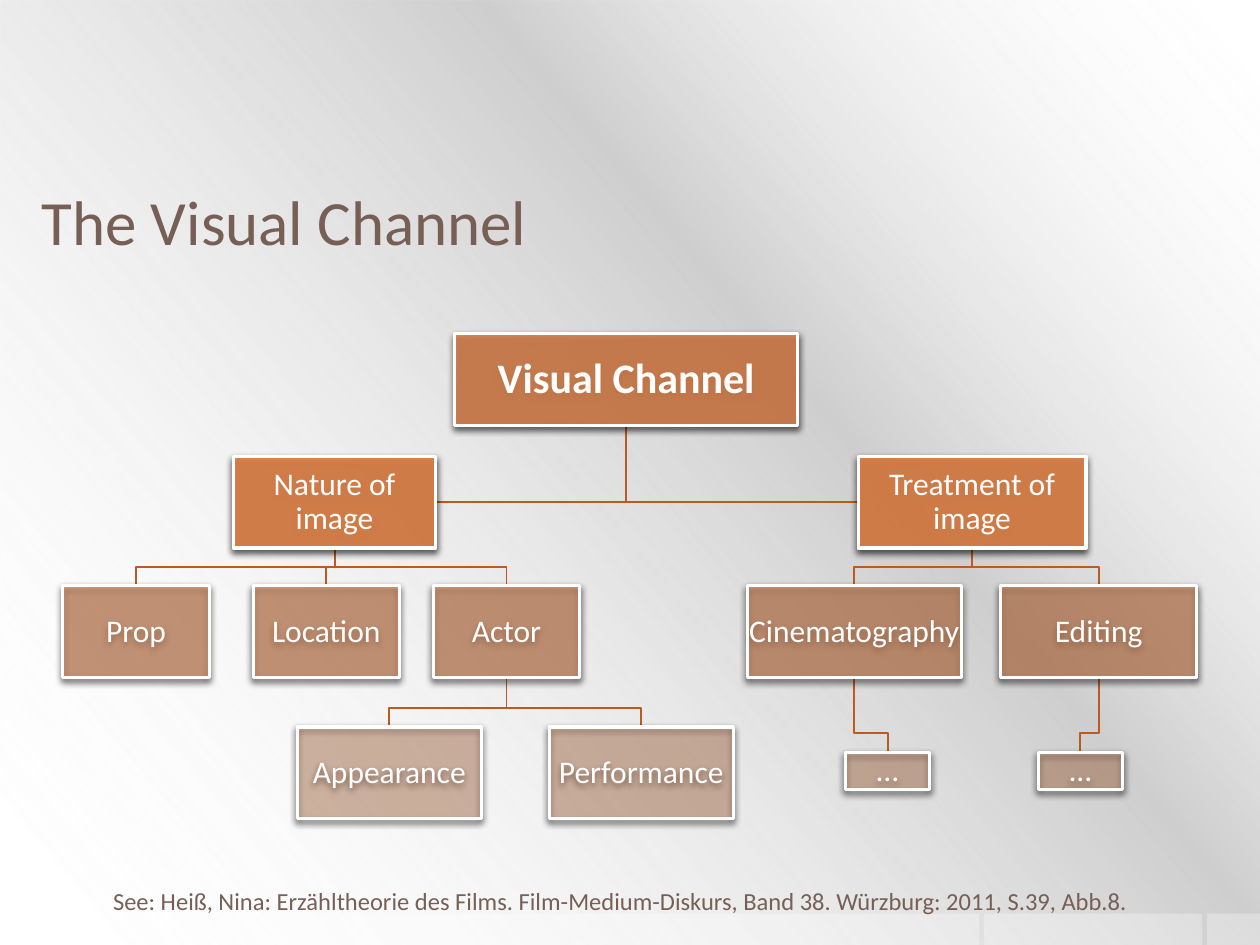
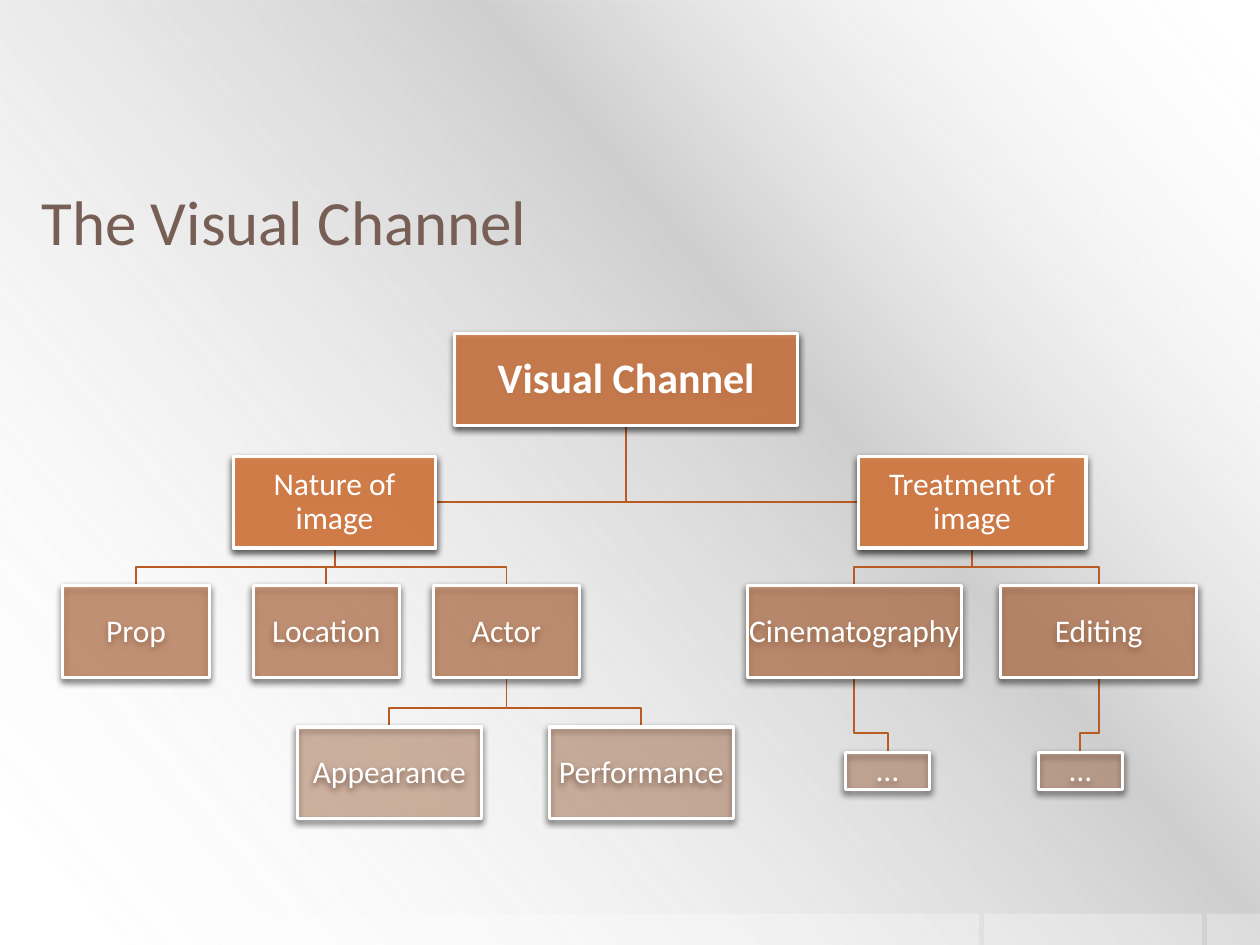
from dataclasses import dataclass
from lxml.etree import SubElement
from pptx import Presentation
from pptx.dml.color import RGBColor
from pptx.enum.shapes import MSO_SHAPE
from pptx.enum.text import MSO_ANCHOR, MSO_AUTO_SIZE, PP_ALIGN
from pptx.oxml.ns import qn
from pptx.util import Inches, Pt

COLUMNS, ROWS = 100, 75
SLIDE_WIDTH, SLIDE_HEIGHT = Inches(10), Inches(7.5)
FONT = "Calibri"
WHITE, GRAY, BROWN = "FFFFFF", "BFBFBF", "775F55"
ORANGE, RUST, BLACK = "DD8047", "B95B22", "000000"
TITLE = "The Visual Channel"
CITATION = (
    "See: Heiß, Nina: Erzähltheorie des Films. Film-Medium-Diskurs, "
    "Band 38. Würzburg: 2011, S.39, Abb.8."
)
GRADIENT = [(0, WHITE, 0), (34, GRAY, 61), (38, GRAY, 76), (100, WHITE, 0)]
BANDS = [(0, 77.7), (78.1, 17.3), (95.8, 4.2)]

LEVELS = {
    "root": {"top": 0, "height": 7.3, "opacity": 80},
    "branch": {"top": 9.7, "height": 7.3, "opacity": 90},
    "topic": {"top": 20, "height": 7.3, "opacity": 50},
    "detail": {"top": 31.2, "height": 7.3, "opacity": 30},
    "more": {"top": 33.2, "height": 3, "opacity": 30},
}
NODES = [
    ("Visual Channel", None, "root", 31.1, 27.2),
    ("Nature of image", "Visual Channel", "branch", 13.5, 16.1),
    ("Treatment of image", "Visual Channel", "branch", 63.1, 18.1),
    ("Prop", "Nature of image", "topic", 0, 11.6),
    ("Location", "Nature of image", "topic", 15.1, 11.6),
    ("Actor", "Nature of image", "topic", 29.4, 11.6),
    ("Cinematography", "Treatment of image", "topic", 54.3, 17),
    ("Editing", "Treatment of image", "topic", 74.4, 15.6),
    ("Appearance", "Actor", "detail", 18.6, 14.6),
    ("Performance", "Actor", "detail", 38.6, 14.6),
    ("…", "Cinematography", "more", 62.1, 6.7),
    ("…", "Editing", "more", 77.4, 6.7),
]


@dataclass
class Box:
    left: float
    top: float
    width: float
    height: float

    @property
    def right(self):
        return self.left + self.width

    @property
    def bottom(self):
        return self.top + self.height

    @property
    def center(self):
        return self.left + self.width / 2

    @property
    def middle(self):
        return self.top + self.height / 2

    def inner(self, left, top, width, height):
        return Box(self.left + left, self.top + top, width, height)

    def place(self):
        return (*point(self.left, self.top), *point(self.width, self.height))


PAGE = Box(0, 0, COLUMNS, ROWS)
TITLE_BOX = PAGE.inner(3.3, 12.5, 90, 10)
DIAGRAM_BOX = PAGE.inner(5, 26.5, 90, 38.5)
CITATION_BOX = PAGE.inner(3.5, 69.8, 91.5, 5.5)
BAND_BOX = PAGE.inner(0, 72.5, COLUMNS, 2.5)


def point(column, row):
    return round(SLIDE_WIDTH * column / COLUMNS), round(SLIDE_HEIGHT * row / ROWS)


def color(value):
    return RGBColor.from_string(value)


def set_all(target, values):
    for name, value in values.items():
        setattr(target, name, value)


def add_alpha(node, percent):
    SubElement(node, qn("a:alpha"), val=str(percent * 1000))


def write(frame, text, size, ink, frame_format, para_format, bold=False):
    set_all(frame, {"word_wrap": True, "auto_size": MSO_AUTO_SIZE.NONE, **frame_format})
    para = frame.paragraphs[0]
    set_all(para, para_format)
    span = para.add_run()
    span.text = text
    set_all(span.font, {"name": FONT, "size": Pt(size), "bold": bold})
    span.font.color.rgb = color(ink)


def add_panel(page, box, fill, opacity):
    panel = page.shapes.add_shape(MSO_SHAPE.RECTANGLE, *box.place())
    panel.shadow.inherit = False
    panel.fill.solid()
    panel.fill.fore_color.rgb = color(fill)
    add_alpha(panel.element.spPr.find(qn("a:solidFill")).find(qn("a:srgbClr")), opacity)
    panel.line.fill.background()
    return panel


def add_backdrop(page, box):
    backdrop = page.shapes.add_shape(MSO_SHAPE.RECTANGLE, *box.place())
    backdrop.shadow.inherit = False
    backdrop.line.fill.background()
    backdrop.fill.gradient()
    backdrop.fill.gradient_angle = 220
    stops = next(backdrop.element.iter(qn("a:gsLst")))
    for stop in list(stops):
        stops.remove(stop)
    for position, tint, opacity in GRADIENT:
        stop = SubElement(stops, qn("a:gs"), pos=str(position * 1000))
        add_alpha(SubElement(stop, qn("a:srgbClr"), val=tint), opacity)
    return backdrop


def add_bands(page, box):
    return [
        add_panel(page, box.inner(left, 0, width, box.height), WHITE, 30)
        for left, width in BANDS
    ]


def dress_master(deck, page):
    fill = deck.slide_master.background.fill
    fill.solid()
    fill.fore_color.rgb = color(WHITE)
    decorations = [add_backdrop(page, PAGE), *add_bands(page, BAND_BOX)]
    for number, shape in enumerate(decorations, 20):
        shape.element.nvSpPr.cNvPr.set("id", str(number))
        deck.slide_master.shapes.element.append(shape.element)


def add_title(page, box):
    title = page.shapes.title
    set_all(title, dict(zip(("left", "top", "width", "height"), box.place())))
    frame_format = {
        "vertical_anchor": MSO_ANCHOR.MIDDLE,
        "margin_left": 0,
        "margin_right": 0,
    }
    write(title.text_frame, TITLE, 36, BROWN, frame_format, {"alignment": PP_ALIGN.LEFT})


def add_branch(page, parent, child, from_root):
    if from_root:
        edge = child.right if child.center < parent.center else child.left
        corners = [(parent.center, child.middle), (edge, child.middle)]
    else:
        bend = child.top - 1.5
        corners = [(parent.center, bend), (child.center, bend), (child.center, child.top)]
    builder = page.shapes.build_freeform(*point(parent.center, parent.bottom))
    builder.add_line_segments([point(*corner) for corner in corners], close=False)
    branch = builder.convert_to_shape()
    branch.shadow.inherit = False
    branch.fill.background()
    branch.line.color.rgb = color(RUST)
    branch.line.width = Pt(1.1)


def add_node(page, box, text, level):
    node = add_panel(page, box, ORANGE, LEVELS[level]["opacity"])
    node.line.color.rgb = color(WHITE)
    node.line.width = Pt(1.75)
    shadow = SubElement(
        node.element.spPr.find(qn("a:effectLst")),
        qn("a:outerShdw"),
        blurRad=str(Pt(4)),
        dist=str(Pt(2)),
        dir="5400000",
        rotWithShape="0",
    )
    add_alpha(SubElement(shadow, qn("a:srgbClr"), val=BLACK), 70)
    is_root = level == "root"
    sides = ("left", "top", "right", "bottom")
    frame_format = {f"margin_{side}": Inches(0.02 if is_root else 0.01) for side in sides}
    frame_format["vertical_anchor"] = MSO_ANCHOR.MIDDLE
    para_format = {"alignment": PP_ALIGN.CENTER, "line_spacing": 0.9}
    size = 24 if is_root else 18
    write(node.text_frame, text, size, WHITE, frame_format, para_format, is_root)


def add_diagram(page, box):
    boxes = [
        box.inner(left, LEVELS[level]["top"], width, LEVELS[level]["height"])
        for _, _, level, left, width in NODES
    ]
    by_name = {node[0]: node_box for node, node_box in zip(NODES, boxes)}
    for (_, parent, level, _, _), node_box in zip(NODES, boxes):
        if parent:
            add_branch(page, by_name[parent], node_box, level == "branch")
    for (text, _, level, _, _), node_box in zip(NODES, boxes):
        add_node(page, node_box, text, level)


def add_citation(page, box):
    citation = page.shapes.add_textbox(*box.place())
    write(citation.text_frame, CITATION, 14, BROWN, {}, {"alignment": PP_ALIGN.CENTER})


def add_channel_slide(deck):
    page = deck.slides.add_slide(deck.slide_layouts[5])
    add_title(page, TITLE_BOX)
    add_diagram(page, DIAGRAM_BOX)
    return page


def main():
    deck = Presentation()
    set_all(deck, {"slide_width": SLIDE_WIDTH, "slide_height": SLIDE_HEIGHT})
    cited_page = add_channel_slide(deck)
    add_citation(cited_page, CITATION_BOX)
    dress_master(deck, cited_page)
    add_channel_slide(deck)
    deck.save("out.pptx")


if __name__ == "__main__":
    main()
